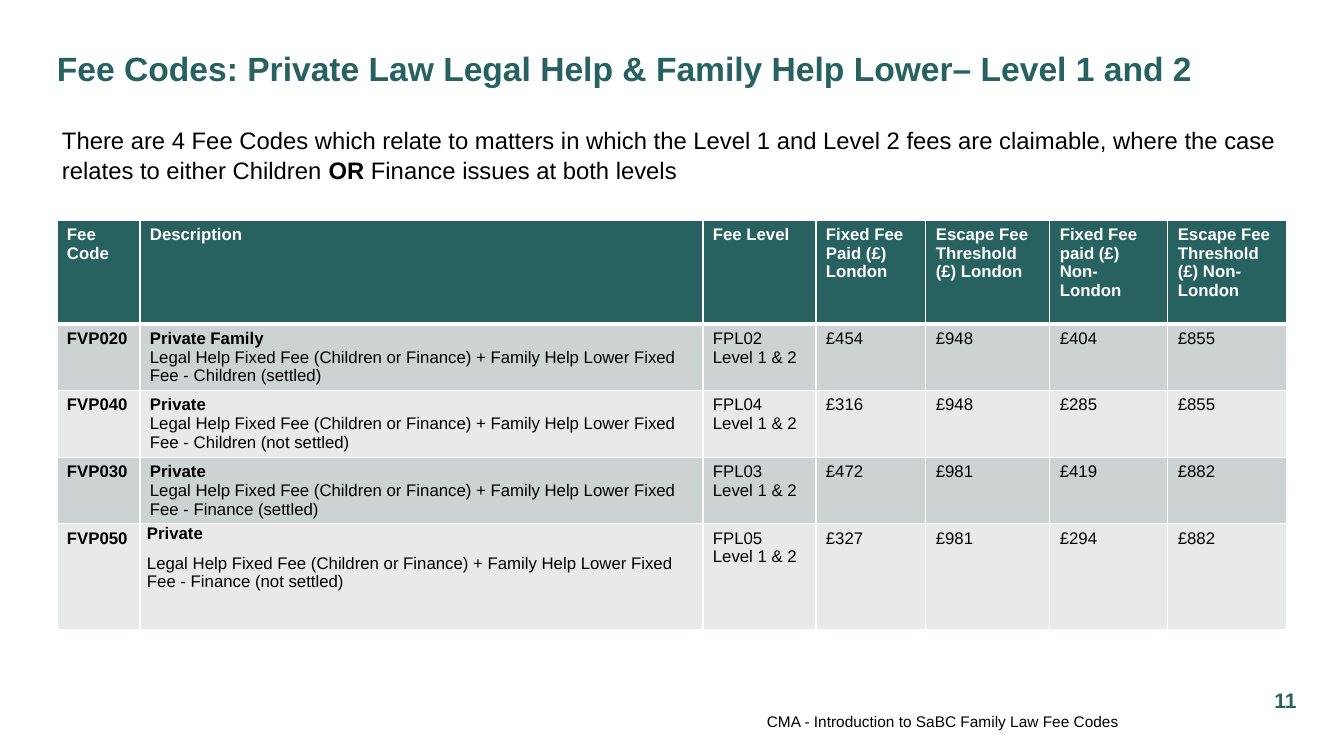
"""Build the private law fee codes slide."""
from pptx import Presentation
from pptx import util as u
from pptx.dml.color import RGBColor
from pptx.enum import text
from pptx.oxml import parse_xml
from pptx.oxml.ns import nsdecls

COLORS = {"teal": "276160", "black": "000000", "white": "FFFFFF",
          "dark band": "CDD2D2", "light band": "E8EAEA"}
FONT = "Arial"
SCALE = 914400 / 100.8
SLIDE_SIZE = (1344, 756)

TITLE = "Fee Codes: Private Law Legal Help & Family Help Lower– Level 1 and 2"
INTRO = [
    ("There are 4 Fee Codes which relate to matters in which the Level 1 and Level 2 fees "
     "are claimable, where the case relates to either Children ", False),
    ("OR", True),
    (" Finance issues at both levels", False),
]
FOOTER = "CMA - Introduction to SaBC Family Law Fee Codes"
PAGE_NUMBER = "11"

HEADINGS = ["Fee Code", "Description", "Fee Level", "Fixed Fee Paid (£) London",
            "Escape Fee Threshold (£) London", "Fixed Fee paid (£) Non-London",
            "Escape Fee Threshold (£) Non-London"]
DESCRIPTION = "Legal Help Fixed Fee (Children or Finance) + Family Help Lower Fixed Fee - "
LEVELS = "Level 1 & 2"
FEES = [
    ("FVP020", "Private Family", "Children (settled)", "FPL02", "£454", "£948", "£404", "£855"),
    ("FVP040", "Private", "Children (not settled)", "FPL04", "£316", "£948", "£285", "£855"),
    ("FVP030", "Private", "Finance (settled)", "FPL03", "£472", "£981", "£419", "£882"),
    ("FVP050", "Private", "Finance (not settled)", "FPL05", "£327", "£981", "£294", "£882"),
]
TABLE_CORNER = (57, 220)
COLUMN_WIDTHS = [83, 563, 113, 110, 124, 118, 119]
ROW_HEIGHTS = [104, 66, 67, 66, 106]

TEXT_BOXES = [
    {"place": (57, 38, 1203, 60), "spans": [(TITLE, True)], "size": 24, "color": "teal"},
    {"place": (52, 119, 1259, 67), "spans": INTRO, "size": 17, "color": "black",
     "margins": (10, 5), "anchor": text.MSO_ANCHOR.TOP, "format": {"line_spacing": 1.05}},
    {"place": (325, 711, 794, 20), "spans": [(FOOTER, False)], "size": 11, "color": "black",
     "format": {"alignment": text.PP_ALIGN.RIGHT}},
    {"place": (1261, 680, 49, 40), "spans": [(PAGE_NUMBER, True)], "size": 15, "color": "teal",
     "format": {"alignment": text.PP_ALIGN.CENTER}},
]


def px(length):
    return u.Emu(round(length * SCALE))


def set_values(target, values):
    for name, value in values.items():
        setattr(target, name, value)


def margins(across, down):
    return {"margin_left": px(across), "margin_right": px(across),
            "margin_top": px(down), "margin_bottom": px(down)}


def write(para, spans, size, color):
    for words, bold in spans:
        span = para.add_run()
        span.text = words
        set_values(span.font, {"name": FONT, "size": u.Pt(size), "bold": bold})
        span.font.color.rgb = RGBColor.from_string(COLORS[color])


def add_text(page, item):
    box = page.shapes.add_textbox(*map(px, item["place"]))
    frame = box.text_frame
    set_values(frame, {"word_wrap": True,
                       "vertical_anchor": item.get("anchor", text.MSO_ANCHOR.MIDDLE),
                       **margins(*item.get("margins", (0, 0)))})
    para = frame.paragraphs[0]
    set_values(para, item.get("format", {}))
    write(para, item["spans"], item["size"], item["color"])


def set_borders(cell, points):
    properties = cell._tc.get_or_add_tcPr()
    for index, side in enumerate("LRTB"):
        width = u.Pt(points.get(side, 1))
        properties.insert(index, parse_xml(
            f'<a:ln{side} {nsdecls("a")} w="{width}"><a:solidFill>'
            f'<a:srgbClr val="{COLORS["white"]}"/></a:solidFill></a:ln{side}>'))


def fee_cells(fee):
    code, family, outcome, level, *amounts = fee
    return [[(code, True)], [(family, True), (DESCRIPTION + outcome, False)],
            [(level, False), (LEVELS, False)], *[[(amount, False)] for amount in amounts]]


def add_fee_table(page):
    rows = [[[(heading, True)] for heading in HEADINGS], *map(fee_cells, FEES)]
    size = (sum(COLUMN_WIDTHS), sum(ROW_HEIGHTS))
    table = page.shapes.add_table(len(rows), len(HEADINGS),
                                  *map(px, TABLE_CORNER + size)).table
    for column, width in zip(table.columns, COLUMN_WIDTHS):
        column.width = px(width)
    for row, height in zip(table.rows, ROW_HEIGHTS):
        row.height = px(height)
    for r, row in enumerate(rows):
        band = "teal" if r == 0 else "dark band" if r % 2 else "light band"
        for c, lines in enumerate(row):
            cell = table.cell(r, c)
            cell.fill.solid()
            cell.fill.fore_color.rgb = RGBColor.from_string(COLORS[band])
            set_borders(cell, {0: {"B": 3}, 1: {"T": 3}}.get(r, {}))
            spaced = r == len(FEES) and c == 1
            set_values(cell, margins(7, 0) if spaced else margins(10, 5))
            for i, line in enumerate(lines):
                frame = cell.text_frame
                para = frame.add_paragraph() if i else frame.paragraphs[0]
                if spaced:
                    para.space_after = u.Pt(8)
                write(para, [line], 12, "black" if r else "white")


def main():
    deck = Presentation()
    deck.slide_width, deck.slide_height = map(px, SLIDE_SIZE)
    page = deck.slides.add_slide(deck.slide_layouts[6])
    add_fee_table(page)
    for item in TEXT_BOXES:
        add_text(page, item)
    deck.save("out.pptx")


if __name__ == "__main__":
    main()
